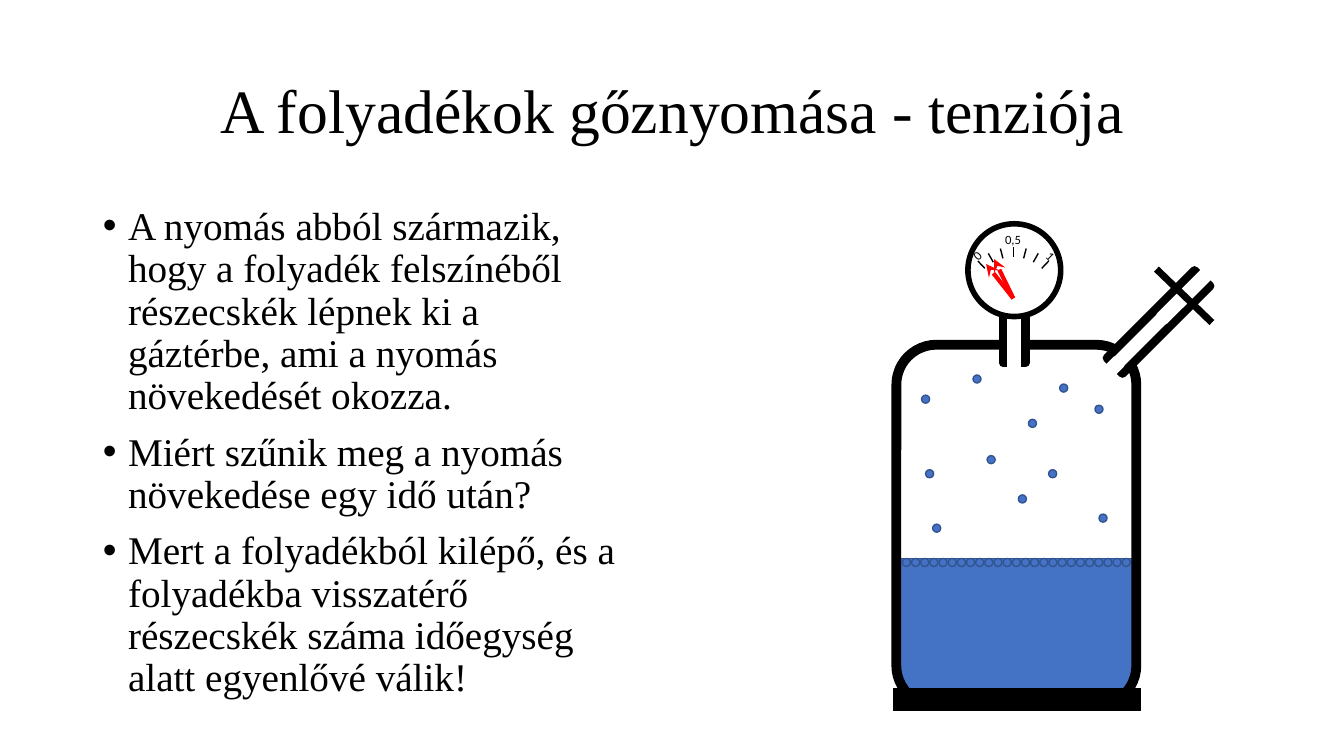
from math import cos, radians, sin

from lxml.etree import SubElement
from pptx import Presentation
from pptx.dml.color import RGBColor
from pptx.enum.shapes import MSO_CONNECTOR, MSO_SHAPE
from pptx.enum.text import MSO_ANCHOR, MSO_AUTO_SIZE, PP_ALIGN
from pptx.oxml.ns import qn
from pptx.util import Inches, Pt

COLORS = {"black": "000000", "white": "FFFFFF", "water": "4472C4",
          "water edge": "325491", "needle": "FF0000"}
CELL = Inches(0.1)  # all places and lengths are columns and rows of this grid


def add_figure(shapes, kind, box, fill, line, weight, rotation=0):
    """Add a preset shape; box is left, top, width, height in grid cells."""
    shape = shapes.add_shape(kind, *[round(value * CELL) for value in box])
    shape.shadow.inherit = False
    shape.rotation = rotation
    if fill:
        shape.fill.solid()
        shape.fill.fore_color.rgb = RGBColor.from_string(COLORS[fill])
    else:
        shape.fill.background()
    shape.line.color.rgb = RGBColor.from_string(COLORS[line])
    shape.line.width = Pt(weight)


def add_stroke(shapes, ends, color, weight, arrow=None):
    """Add a straight line; ends is x1, y1, x2, y2 in grid cells."""
    stroke = shapes.add_connector(
        MSO_CONNECTOR.STRAIGHT, *[round(value * CELL) for value in ends])
    stroke.line.color.rgb = RGBColor.from_string(COLORS[color])
    stroke.line.width = Pt(weight)
    properties = stroke._element.spPr
    if arrow:
        SubElement(stroke.line._get_or_add_ln(), qn("a:tailEnd"), type=arrow)
    SubElement(properties, qn("a:effectLst"))


presentation = Presentation()
presentation.slide_width = Inches(13.33)
presentation.slide_height = Inches(7.5)
slide = presentation.slides.add_slide(presentation.slide_layouts[1])
title, body = slide.placeholders

# Title and list
texts = [
    (title, (9.2, 4, 115, 14.5), 44, ["A folyadékok gőznyomása - tenziója"]),
    (body, (9.2, 20, 53.4, 52.6), 28, [
        "A nyomás abból származik, hogy a folyadék felszínéből részecskék "
        "lépnek ki a gáztérbe, ami a nyomás növekedését okozza.",
        "Miért szűnik meg a nyomás növekedése egy idő után?",
        "Mert a folyadékból kilépő, és a folyadékba visszatérő részecskék "
        "száma időegység alatt egyenlővé válik!"]),
]
for holder, box, size, lines in texts:
    holder.left, holder.top, holder.width, holder.height = [
        round(value * CELL) for value in box]
    frame = holder.text_frame
    frame.word_wrap = True
    frame.auto_size = MSO_AUTO_SIZE.NONE
    frame.vertical_anchor = MSO_ANCHOR.MIDDLE if holder is title else MSO_ANCHOR.TOP
    for number, line in enumerate(lines):
        paragraph = frame.paragraphs[0] if number == 0 else frame.add_paragraph()
        paragraph.line_spacing = 0.9
        if holder is title:
            paragraph.alignment = PP_ALIGN.CENTER
        else:
            paragraph.space_before = Pt(10)
            indents = paragraph._p.get_or_add_pPr()
            indents.set("marL", str(Inches(0.25)))
            indents.set("indent", str(-Inches(0.25)))
            SubElement(indents, qn("a:buFont"), typeface="Arial")
            SubElement(indents, qn("a:buChar"), char="•")
        run = paragraph.add_run()
        run.text = line
        run.font.name = "Times New Roman"
        run.font.size = Pt(size)
        run.font.color.rgb = RGBColor.from_string(COLORS["black"])

# Liquid, then the vessel with its gauge and side tube
add_figure(slide.shapes, MSO_SHAPE.RECTANGLE, (89.1, 55.4, 23.2, 14.1),
           "water", "water edge", 1)
vessel = slide.shapes.add_group_shape().shapes
add_figure(vessel, MSO_SHAPE.ROUNDED_RECTANGLE, (88.9, 34.2, 23.8, 35.8),
           None, "black", 7)
add_figure(vessel, MSO_SHAPE.RECTANGLE, (99.5, 29.1, 2.2, 6.9), "white", "black", 6)
add_figure(vessel, MSO_SHAPE.OVAL, (96, 22.2, 9.2, 9.2), "white", "black", 4)
add_figure(vessel, MSO_SHAPE.RECTANGLE, (113.8, 25.8, 2.2, 12.3),
           "white", "black", 6, 45)
add_stroke(vessel, (88.6, 69.4, 113.2, 69.4), "black", 16)
for left, top, rotation in [(108.2, 34.9, 45), (117.4, 25.7, 45), (100.3, 35.4, 0)]:
    add_figure(vessel, MSO_SHAPE.RECTANGLE, (left, top, 0.6, 6.9),
               "white", "white", 6, rotation)
add_stroke(slide.shapes, (114.7, 26.7, 120.2, 32), "black", 5)

# Particles: an even row at the surface, the rest spread in the vapour
SURFACE_COUNT = 25
surface_step = (111.3 - 89.5) / (SURFACE_COUNT - 1)
surface = [(89.5 + number * surface_step, 55.4) for number in range(SURFACE_COUNT)]
vapour = [(91.8, 46.6), (91.4, 39.2), (92.5, 52), (101, 49.1), (108.6, 40.2),
          (96.5, 37.2), (104, 46.6), (109, 51), (102, 41.6), (97.9, 45.2),
          (105.1, 38.1)]
for left, top in surface + vapour:
    add_figure(slide.shapes, MSO_SHAPE.OVAL, (left, top, 0.8, 0.8),
               "water", "water edge", 1)

# Gauge scale: ticks fan out around the needle pivot
PIVOT_X, PIVOT_Y = 100.5, 29.6
dial = slide.shapes.add_group_shape().shapes
for number in range(-3, 4):
    angle = radians(number * 14.5)
    add_stroke(dial, [place for radius in (5.1, 4.1) for place in
                      (PIVOT_X + radius * sin(angle), PIVOT_Y - radius * cos(angle))],
               "black", 1)
for label, left, top, width, rotation in [("1", 102.9, 24.2, 2.7, 45),
                                          ("0", 95.6, 24.1, 2.7, 315),
                                          ("0,5", 98.7, 22.5, 3.6, 0)]:
    box = dial.add_textbox(*[round(value * CELL) for value in (left, top, width, 2.5)])
    box.rotation = rotation
    box.text_frame.word_wrap = False
    box.text_frame.auto_size = MSO_AUTO_SIZE.SHAPE_TO_FIT_TEXT
    run = box.text_frame.paragraphs[0].add_run()
    run.text = label
    run.font.name = "Calibri"
    run.font.size = Pt(9)
    run.font.color.rgb = RGBColor.from_string(COLORS["black"])

# Needle positions
for tip_x, tip_y in [(97.8, 26.2), (98.6, 25.7)]:
    add_stroke(slide.shapes, (PIVOT_X, PIVOT_Y, tip_x, tip_y), "needle", 3, "stealth")

presentation.save("out.pptx")
